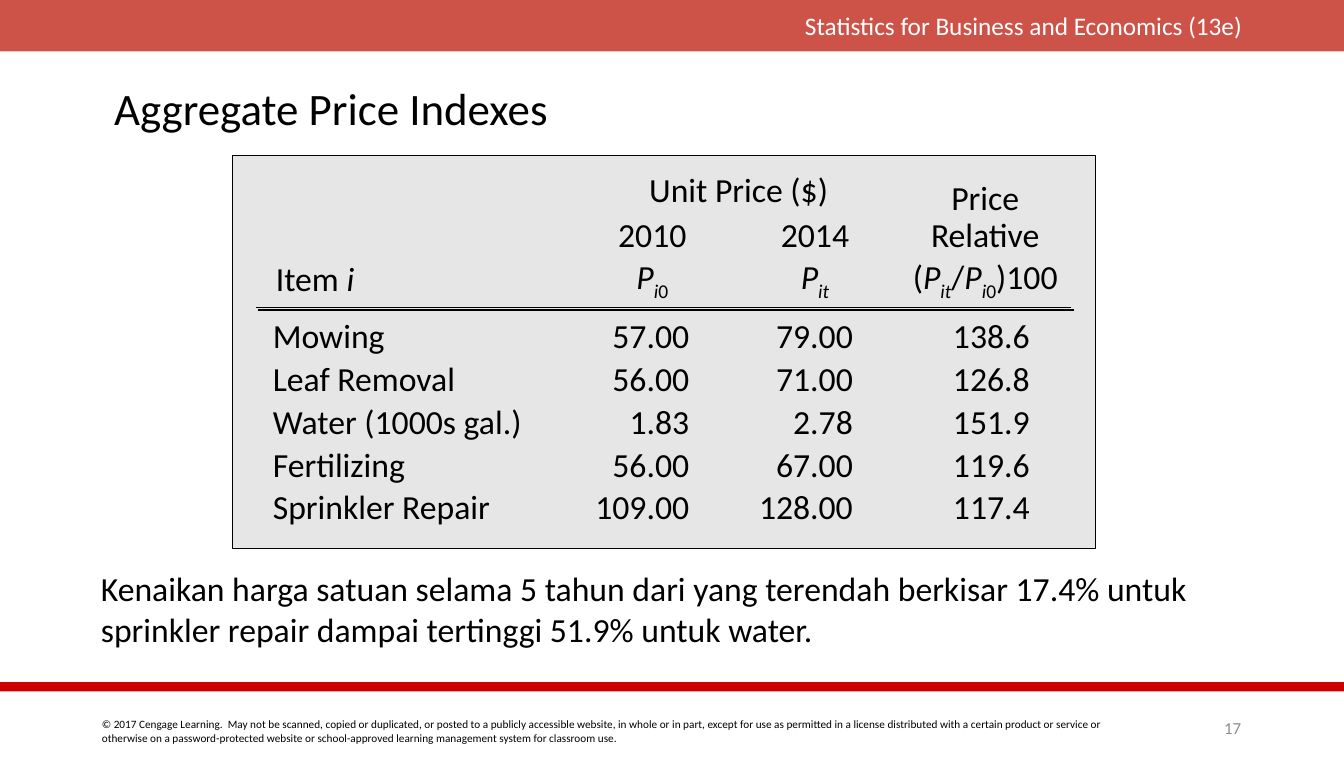
from lxml.etree import SubElement
from pptx import Presentation
from pptx.dml.color import RGBColor
from pptx.enum.shapes import MSO_CONNECTOR, MSO_SHAPE
from pptx.enum.text import MSO_ANCHOR, PP_ALIGN
from pptx.oxml import parse_xml
from pptx.oxml.ns import nsdecls, qn
from pptx.util import Inches, Pt

NO_STYLE_NO_GRID = "{2D5ABB26-0587-4C30-8999-92F81FD0307C}"


def color(hex_value):
    return RGBColor.from_string(hex_value)


def write(paragraph, runs, size, hex_value="000000", align=PP_ALIGN.LEFT):
    """Fill a paragraph; in each (text, style) run, "i" is italic and "s" subscript."""
    paragraph.alignment = align
    paragraph.font.name = "Calibri"
    paragraph.font.size = Pt(size)
    paragraph.font.color.rgb = color(hex_value)
    for text, style in runs:
        run = paragraph.add_run()
        run.text = text
        if "i" in style:
            run.font.italic = True
        if "s" in style:
            run.font._element.set("baseline", "-25000")


presentation = Presentation()
presentation.slide_width = Inches(13.3)
presentation.slide_height = Inches(7.5)
slide = presentation.slides.add_slide(presentation.slide_layouts[5])

# Bands and table panel
panels = []
for left, top, width, height, fill in [
    (0, 0, 13.3, 0.51, "BF2317"),
    (0, 6.75, 13.3, 0.09, "CC0000"),
    (2.3, 1.54, 8.54, 3.89, "E7E6E6"),
]:
    shape = slide.shapes.add_shape(
        MSO_SHAPE.RECTANGLE, Inches(left), Inches(top), Inches(width), Inches(height))
    shape.shadow.inherit = False
    shape.fill.solid()
    shape.fill.fore_color.rgb = color(fill)
    shape.line.fill.background()
    panels.append(shape)
header_band, footer_band, table_panel = panels
header_color = header_band._element.spPr.find(qn("a:solidFill"))[0]
SubElement(header_color, qn("a:alpha")).set("val", "78000")
table_panel.line.color.rgb = color("000000")
table_panel.line.width = Pt(1)

# Title
title = slide.shapes.title
title.left, title.top = Inches(1.03), Inches(0.81)
title.width, title.height = Inches(11.47), Inches(0.65)
title.text_frame.vertical_anchor = MSO_ANCHOR.TOP
title.text_frame.paragraphs[0].line_spacing = 0.9
write(title.text_frame.paragraphs[0], [("Aggregate Price Indexes", "")], 32)

# Running text
for left, top, width, height, size, hex_value, align, text in [
    (6.65, 0.05, 5.74, 0.4, 18, "FFFFFF", PP_ALIGN.RIGHT,
     "Statistics for Business and Economics (13e)"),
    (0.9, 5.57, 11.21, 0.91, 24, "000000", PP_ALIGN.LEFT,
     "Kenaikan harga satuan selama 5 tahun dari yang terendah berkisar 17.4% untuk "
     "sprinkler repair dampai tertinggi 51.9% untuk water."),
    (0.91, 7.05, 10.3, 0.37, 8, "000000", PP_ALIGN.LEFT,
     "© 2017 Cengage Learning.  May not be scanned, copied or duplicated, or posted to a "
     "publicly accessible website, in whole or in part, except for use as permitted in a "
     "license distributed with a certain product or service or otherwise on a "
     "password-protected website or school-approved learning management system for "
     "classroom use."),
    (11.7, 7.05, 0.68, 0.3, 12, "8C8C8C", PP_ALIGN.RIGHT, "17"),
]:
    text_box = slide.shapes.add_textbox(Inches(left), Inches(top), Inches(width), Inches(height))
    text_box.text_frame.word_wrap = True
    write(text_box.text_frame.paragraphs[0], [(text, "")], size, hex_value, align)

# Price table
column_widths = [3.1, 1.6, 1.62, 1.75]
row_heights = [0.48, 0.36, 0.59] + [0.425] * 5
table_frame = slide.shapes.add_table(
    len(row_heights), len(column_widths), Inches(2.53), Inches(1.69),
    Inches(sum(column_widths)), Inches(sum(row_heights)))
table = table_frame.table
table.first_row = False
table.horz_banding = False
table._tbl.tblPr.find(qn("a:tableStyleId")).text = NO_STYLE_NO_GRID
for column, width in zip(table.columns, column_widths):
    column.width = Inches(width)
for row, height in zip(table.rows, row_heights):
    row.height = Inches(height)
for cell in table.iter_cells():
    cell.fill.background()
    cell.vertical_anchor = MSO_ANCHOR.MIDDLE
    cell.margin_left = cell.margin_right = cell.margin_top = cell.margin_bottom = 0

base_price = [("P", "i"), ("i", "is"), ("0", "s")]
current_price = [("P", "i"), ("it", "is")]
headings = {
    (0, 1): [("Unit Price ($)", "")],
    (0, 3): [("Price", "")],
    (1, 1): [("2010", "")],
    (1, 2): [("2014", "")],
    (1, 3): [("Relative", "")],
    (2, 0): [("Item ", ""), ("i", "i")],
    (2, 1): base_price,
    (2, 2): current_price,
    (2, 3): [("(", ""), *current_price, ("/", ""), *base_price, (")100", "")],
}
for (row, column), runs in headings.items():
    cell = table.cell(row, column)
    cell.margin_left = Inches(0.05 if column else 0.2)
    cell.margin_bottom = Inches(0.1 if row == 2 else 0)
    if row == 1:
        cell.text_frame.paragraphs[0].line_spacing = 0.85
    write(cell.text_frame.paragraphs[0], runs, 24,
          align=PP_ALIGN.CENTER if column else PP_ALIGN.LEFT)

unit_price = table.cell(0, 1)
unit_price.merge(table.cell(0, 2))
unit_price.margin_left = Inches(0.14)
unit_price.vertical_anchor = MSO_ANCHOR.TOP
table.cell(0, 3).vertical_anchor = MSO_ANCHOR.BOTTOM

items = [
    ("Mowing", "57.00", "79.00", "138.6"),
    ("Leaf Removal", "56.00", "71.00", "126.8"),
    ("Water (1000s gal.)", "1.83", "2.78", "151.9"),
    ("Fertilizing", "56.00", "67.00", "119.6"),
    ("Sprinkler Repair", "109.00", "128.00", "117.4"),
]
for row, item in enumerate(items, start=3):
    for column, text in enumerate(item):
        cell = table.cell(row, column)
        if column:
            cell.margin_right = Inches(0.41)
        else:
            cell.margin_left = Inches(0.17)
        write(cell.text_frame.paragraphs[0], [(text, "")], 24,
              align=PP_ALIGN.RIGHT if column else PP_ALIGN.LEFT)

# Rule under the headings, doubled by a hard shadow
heading_rule = slide.shapes.add_connector(
    MSO_CONNECTOR.STRAIGHT, Inches(2.53), Inches(3.04), Inches(10.6), Inches(3.04))
heading_rule.line.color.rgb = color("000000")
heading_rule.line.width = Pt(1)
heading_rule._element.spPr.append(parse_xml(
    f'<a:effectLst {nsdecls("a")}><a:outerShdw dist="35560" dir="2700000" algn="ctr">'
    '<a:srgbClr val="000000"/></a:outerShdw></a:effectLst>'))

presentation.save("out.pptx")
